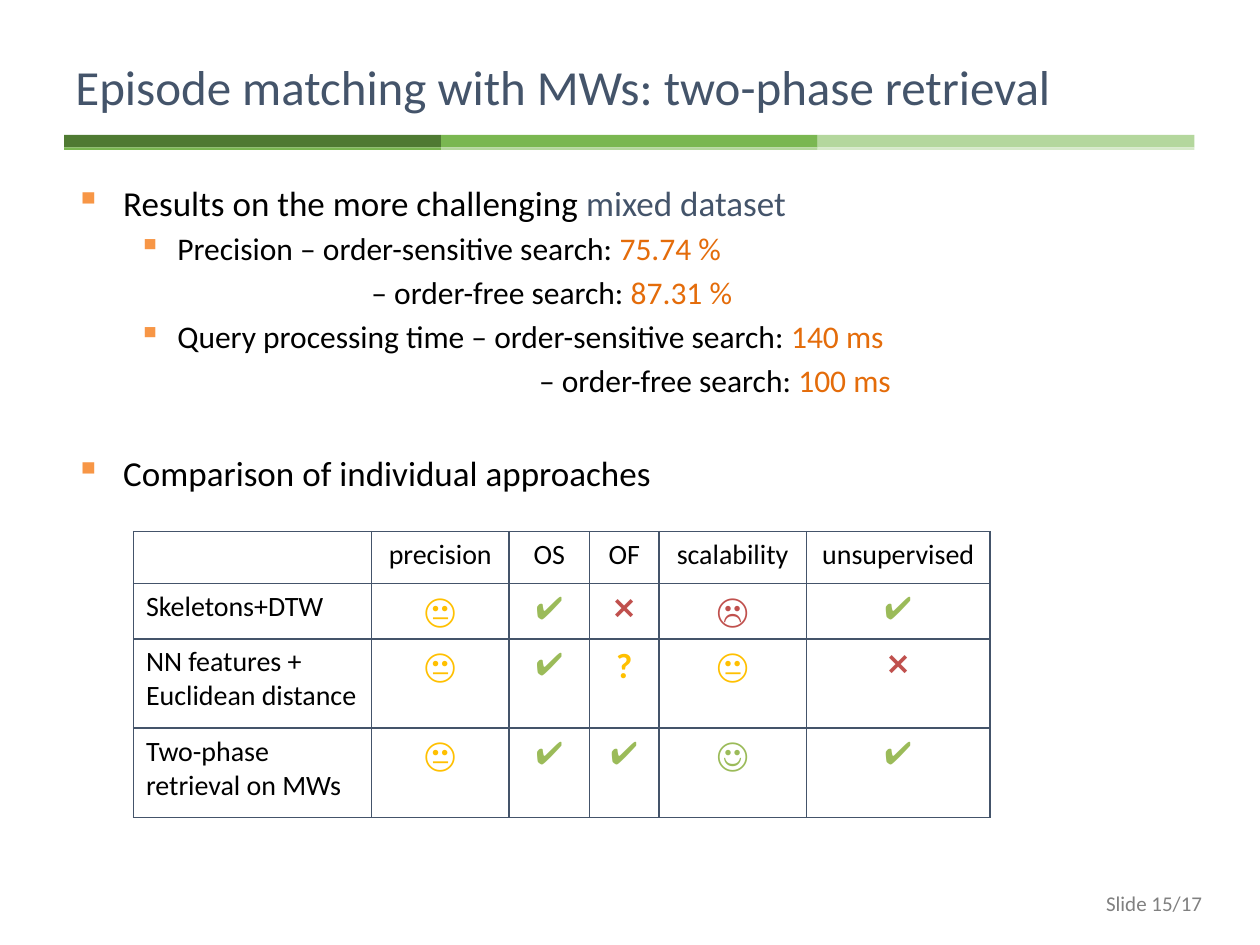
from lxml import etree
from pptx import Presentation
from pptx.dml.color import RGBColor
from pptx.enum import shapes, text
from pptx.oxml import ns
from pptx.util import Inches, Pt

FONT = "Calibri"
COLORS = {
    "slate": "44546A", "black": "000000", "grey": "808080",
    "dark green": "4F7A32", "green": "7AB751",
    "light green": "B4D79D", "pale green": "D6E9C9",
    "bullet": "F79646", "result": "E46C0A",
    "good": "9BBB59", "fair": "FFC000", "bad": "C0504D",
}
# symbol: (colour, size, bold)
MARKS = {
    "😐": ("fair", 20, True), "☹": ("bad", 20, True), "☺": ("good", 20, True),
    "✔": ("good", 18, False), "❌": ("bad", 18, False), "?": ("fair", 20, True),
}
APPROACHES = [
    ["", "precision", "OS", "OF", "scalability", "unsupervised"],
    ["Skeletons+DTW", "😐", "✔", "❌", "☹", "✔"],
    ["NN features + Euclidean distance", "😐", "✔", "?", "😐", "❌"],
    ["Two-phase retrieval on MWs", "😐", "✔", "✔", "☺", "✔"],
]
COLUMN_WIDTHS = [1.89, 1.09, 0.64, 0.55, 1.17, 1.46]
ROW_HEIGHTS = [0.41, 0.44, 0.71, 0.71]
# (left margin, hanging indent, size, space before, label, highlight, its colour)
FINDINGS = [
    (0.38, 0.38, 20, 4, "Results on the more challenging ", "mixed dataset", "slate"),
    (0.81, 0.31, 18, 3.5, "Precision – order-sensitive search: ", "75.74 %", "result"),
    (2.35, 0, 18, 3.5, "– order-free search: ", "87.31 %", "result"),
    (0.81, 0.31, 18, 3.5, "Query processing time – order-sensitive search: ", "140 ms", "result"),
    (3.68, 0, 18, 3.5, "– order-free search: ", "100 ms", "result"),
    (0.38, 0.38, 20, 30, "Comparison of individual approaches", "", "black"),
]


def rgb(name):
    return RGBColor.from_string(COLORS[name])


def add_run(paragraph, content, size, color, bold=False):
    run = paragraph.add_run()
    run.text = content
    run.font.name = FONT
    run.font.size = Pt(size)
    run.font.bold = bold
    run.font.color.rgb = rgb(color)


def add_frame(slide, left, top, width, height, anchor=text.MSO_ANCHOR.MIDDLE):
    box = slide.shapes.add_textbox(Inches(left), Inches(top), Inches(width), Inches(height))
    frame = box.text_frame
    frame.word_wrap = True
    frame.vertical_anchor = anchor
    return frame


def add_bar(slide, left, top, width, height, color):
    bar = slide.shapes.add_shape(
        shapes.MSO_SHAPE.RECTANGLE, Inches(left), Inches(top), Inches(width), Inches(height))
    bar.shadow.inherit = False
    bar.fill.solid()
    bar.fill.fore_color.rgb = rgb(color)
    bar.line.fill.background()


def add_divider(slide):
    """Three equal segments, each with a thin lighter strip below."""
    segments = [("dark green", "green"), ("green", "light green"), ("light green", "pale green")]
    width = 2.99
    for i, (main_color, strip_color) in enumerate(segments):
        left = 0.51 + i * width
        add_bar(slide, left, 1.07, width, 0.1, main_color)
        add_bar(slide, left, 1.17, width, 0.02, strip_color)


def indent(paragraph, margin, hanging):
    """Set the left margin, with a square bullet where the first line hangs."""
    properties = paragraph._p.get_or_add_pPr()
    properties.set("marL", str(Inches(margin)))
    properties.set("indent", str(-Inches(hanging)))
    if hanging:
        color = etree.SubElement(properties, ns.qn("a:buClr"))
        etree.SubElement(color, ns.qn("a:srgbClr"), val=COLORS["bullet"])
        etree.SubElement(properties, ns.qn("a:buChar"), char="▪")


def add_findings(slide):
    frame = add_frame(slide, 0.5, 1.39, 9, 5.59, text.MSO_ANCHOR.TOP)
    for i, (margin, hanging, size, before, label, highlight, color) in enumerate(FINDINGS):
        paragraph = frame.add_paragraph() if i else frame.paragraphs[0]
        paragraph.space_before = Pt(before)
        indent(paragraph, margin, hanging)
        add_run(paragraph, label, size, "black")
        if highlight:
            add_run(paragraph, highlight, size, color)


def set_borders(cell):
    properties = cell._tc.get_or_add_tcPr()
    for side in ("lnL", "lnR", "lnT", "lnB"):
        line = etree.SubElement(properties, ns.qn(f"a:{side}"), w=str(Pt(1)))
        fill = etree.SubElement(line, ns.qn("a:solidFill"))
        etree.SubElement(fill, ns.qn("a:srgbClr"), val=COLORS["slate"])


def add_comparison(slide):
    table = slide.shapes.add_table(
        len(ROW_HEIGHTS), len(COLUMN_WIDTHS), Inches(1.06), Inches(4.22),
        Inches(sum(COLUMN_WIDTHS)), Inches(sum(ROW_HEIGHTS))).table
    table.first_row = False
    table.horz_banding = False
    for column, width in zip(table.columns, COLUMN_WIDTHS):
        column.width = Inches(width)
    for row, height, entries in zip(table.rows, ROW_HEIGHTS, APPROACHES):
        row.height = Inches(height)
        for i, (cell, entry) in enumerate(zip(row.cells, entries)):
            set_borders(cell)
            cell.fill.background()
            paragraph = cell.text_frame.paragraphs[0]
            if i:
                paragraph.alignment = text.PP_ALIGN.CENTER
            if entry:
                color, size, bold = MARKS.get(entry, ("black", 16, False))
                add_run(paragraph, entry, size, color, bold)


def main():
    prs = Presentation()
    prs.slide_width, prs.slide_height = Inches(10), Inches(7.5)
    slide = prs.slides.add_slide(prs.slide_layouts[6])

    add_divider(slide)
    number = add_frame(slide, 7.28, 7, 2.36, 0.34).paragraphs[0]
    number.alignment = text.PP_ALIGN.RIGHT
    add_run(number, "Slide 15/17", 12, "grey")
    title = add_frame(slide, 0.5, 0.3, 9.15, 0.77).paragraphs[0]
    add_run(title, "Episode matching with MWs: two-phase retrieval", 28, "slate")
    add_findings(slide)
    add_comparison(slide)

    prs.save("out.pptx")


if __name__ == "__main__":
    main()
